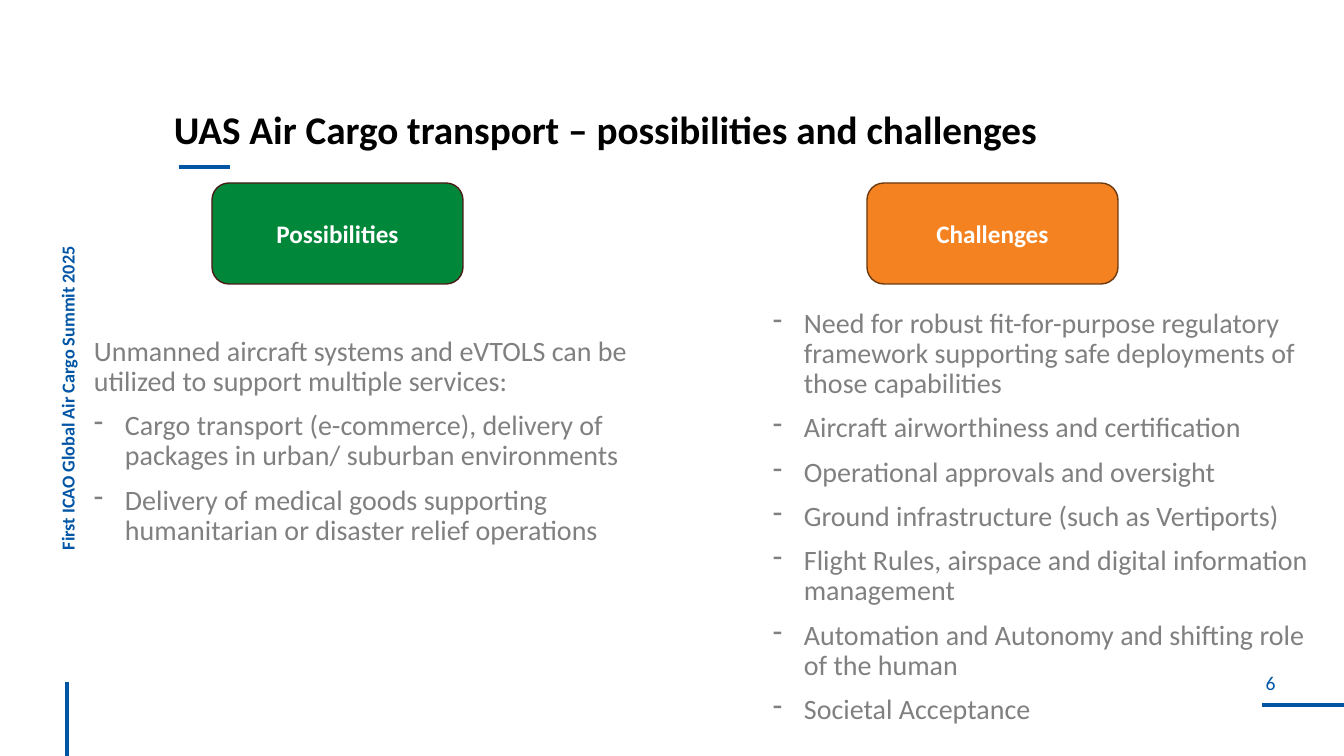
from dataclasses import dataclass

from lxml import etree
from pptx import Presentation
from pptx import util as u
from pptx.dml.color import RGBColor
from pptx.enum import shapes, text
from pptx.oxml.ns import qn

EMU_PER_PX = 914400 / 100.8


@dataclass(frozen=True)
class Theme:
    font: str = "Calibri"
    blue: str = "0055A5"
    black: str = "000000"
    grey: str = "808080"
    white: str = "FFFFFF"
    title_size: int = 28
    body_size: int = 20
    heading_size: int = 18
    number_size: int = 14
    event_size: int = 13
    rule_width: int = 3
    space_before: int = 10
    line_spacing: float = 0.9
    bullet_indent: int = 31


@dataclass(frozen=True)
class Box:
    left: int
    top: int
    width: int
    height: int


@dataclass(frozen=True)
class Rule:
    start_x: int
    start_y: int
    end_x: int
    end_y: int


@dataclass(frozen=True)
class Column:
    heading: str
    heading_left: int
    fill: str
    outline: str
    body: Box
    intro: tuple[str, ...]
    bullets: tuple[str, ...]


THEME = Theme()
HEADING_TOP, HEADING_WIDTH, HEADING_HEIGHT = 183, 251, 101

RULES = (
    Rule(1262, 705, 1344, 705),
    Rule(67, 682, 67, 756),
    Rule(179, 167, 230, 167),
)

COLUMNS = (
    Column(
        "Possibilities", 212, "008739", "491D16", Box(84, 332, 612, 324),
        ("Unmanned aircraft systems and eVTOLS can be utilized to support multiple services:",),
        (
            "Cargo transport (e-commerce), delivery of packages in urban/ suburban environments",
            "Delivery of medical goods supporting humanitarian or disaster relief operations",
        ),
    ),
    Column(
        "Challenges", 867, "F58220", "6B390E", Box(763, 304, 568, 473),
        (),
        (
            "Need for robust fit-for-purpose regulatory framework supporting safe deployments of those capabilities",
            "Aircraft airworthiness and certification",
            "Operational approvals and oversight",
            "Ground infrastructure (such as Vertiports)",
            "Flight Rules, airspace and digital information management",
            "Automation and Autonomy and shifting role of the human",
            "Societal Acceptance",
        ),
    ),
)


def px(length: int) -> u.Emu:
    return u.Emu(round(length * EMU_PER_PX))


def place(box: Box) -> tuple[u.Emu, ...]:
    return px(box.left), px(box.top), px(box.width), px(box.height)


def color(value: str) -> RGBColor:
    return RGBColor.from_string(value)


def write(paragraph, words: str, *, size: int, ink: str, bold: bool = False,
          align=text.PP_ALIGN.LEFT, spacing: float = 1.0, before: int = 0,
          bullet: bool = False) -> None:
    if bullet:
        properties = paragraph._p.get_or_add_pPr()
        indent = px(THEME.bullet_indent)
        properties.set("marL", str(indent))
        properties.set("indent", str(-indent))
        etree.SubElement(properties, qn("a:buChar")).set("char", "-")
    paragraph.alignment = align
    paragraph.line_spacing = spacing
    paragraph.space_before = u.Pt(before)
    run = paragraph.add_run()
    run.text = words
    run.font.name = THEME.font
    run.font.size = u.Pt(size)
    run.font.bold = bold
    run.font.color.rgb = color(ink)


def add_text_box(slide, box: Box, *, wrap: bool = True, anchor=text.MSO_ANCHOR.TOP):
    shape = slide.shapes.add_textbox(*place(box))
    shape.text_frame.word_wrap = wrap
    shape.text_frame.vertical_anchor = anchor
    return shape


def add_rule(slide, rule: Rule) -> None:
    connector = slide.shapes.add_connector(
        shapes.MSO_CONNECTOR.STRAIGHT,
        px(rule.start_x), px(rule.start_y), px(rule.end_x), px(rule.end_y))
    connector.line.color.rgb = color(THEME.blue)
    connector.line.width = u.Pt(THEME.rule_width)
    etree.SubElement(connector._element.spPr, qn("a:effectLst"))


def add_heading(slide, column: Column) -> None:
    box = Box(column.heading_left, HEADING_TOP, HEADING_WIDTH, HEADING_HEIGHT)
    shape = slide.shapes.add_shape(shapes.MSO_SHAPE.ROUNDED_RECTANGLE, *place(box))
    shape.shadow.inherit = False
    shape.fill.solid()
    shape.fill.fore_color.rgb = color(column.fill)
    shape.line.color.rgb = color(column.outline)
    shape.line.width = u.Pt(1)
    shape.text_frame.vertical_anchor = text.MSO_ANCHOR.MIDDLE
    write(shape.text_frame.paragraphs[0], column.heading, size=THEME.heading_size,
          ink=THEME.white, bold=True, align=text.PP_ALIGN.CENTER)


def add_body(slide, column: Column) -> None:
    frame = add_text_box(slide, column.body).text_frame
    for index, words in enumerate(column.intro + column.bullets):
        paragraph = frame.add_paragraph() if index else frame.paragraphs[0]
        write(paragraph, words, size=THEME.body_size, ink=THEME.grey,
              spacing=THEME.line_spacing, before=THEME.space_before if index else 0,
              bullet=index >= len(column.intro))


def add_page_number(slide) -> None:
    frame = add_text_box(slide, Box(1210, 671, 121, 33), wrap=False).text_frame
    frame.margin_left = frame.margin_right = frame.margin_top = frame.margin_bottom = 0
    write(frame.paragraphs[0], "6", size=THEME.number_size, ink=THEME.blue,
          align=text.PP_ALIGN.CENTER)


def add_event_name(slide) -> None:
    shape = add_text_box(slide, Box(-189, 285, 518, 32))
    shape.rotation = 270
    write(shape.text_frame.paragraphs[0], "First ICAO Global Air Cargo Summit 2025",
          size=THEME.event_size, ink=THEME.blue, bold=True, spacing=THEME.line_spacing)


def add_title(slide) -> None:
    shape = add_text_box(slide, Box(164, 99, 1015, 66), anchor=text.MSO_ANCHOR.MIDDLE)
    write(shape.text_frame.paragraphs[0],
          "UAS Air Cargo transport – possibilities and challenges",
          size=THEME.title_size, ink=THEME.black, bold=True, spacing=THEME.line_spacing)


def main() -> None:
    presentation = Presentation()
    presentation.slide_width = px(1344)
    presentation.slide_height = px(756)
    slide = presentation.slides.add_slide(presentation.slide_layouts[6])
    for rule in RULES:
        add_rule(slide, rule)
    add_page_number(slide)
    add_event_name(slide)
    add_title(slide)
    for column in COLUMNS:
        add_heading(slide, column)
        add_body(slide, column)
    presentation.save("out.pptx")


if __name__ == "__main__":
    main()
